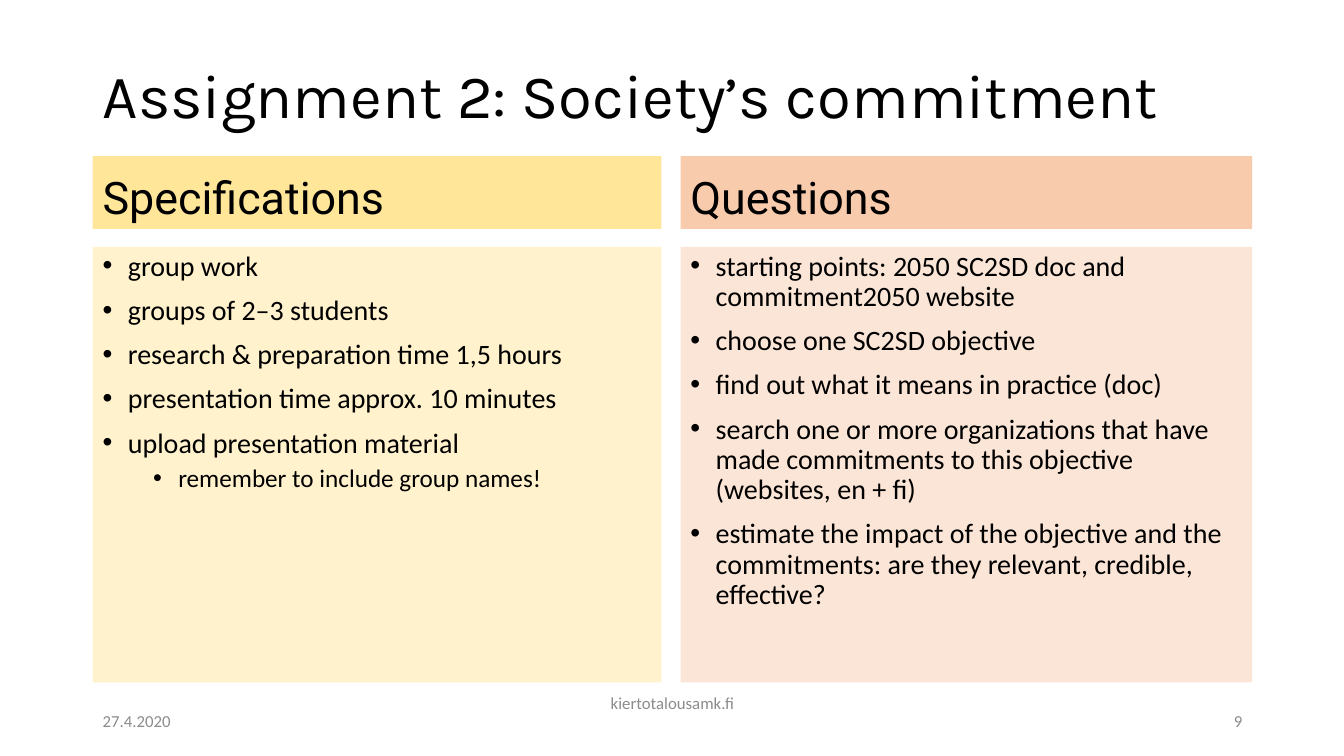
import pptx
import pptx.dml.color
import pptx.enum.text
import pptx.oxml.ns
import pptx.util
from lxml import etree

Inches, Pt = pptx.util.Inches, pptx.util.Pt
ALIGN = pptx.enum.text.PP_ALIGN
ANCHOR = pptx.enum.text.MSO_ANCHOR

COLORS = {
    "text": "000000", "muted": "8C8C8C",
    "gold": "FFE699", "cream": "FFF2CC",
    "peach": "F8CBAD", "blush": "FBE5D6",
}
TITLE = "Assignment 2: Society’s commitment"
# Each point is (level, text).
PANELS = [
    {"head": "Specifications", "left": 0.92, "width": 5.64,
     "dark": "gold", "light": "cream",
     "points": [
         (0, "group work"),
         (0, "groups of 2–3 students"),
         (0, "research & preparation time 1,5 hours"),
         (0, "presentation time approx. 10 minutes"),
         (0, "upload presentation material"),
         (1, "remember to include group names!"),
     ]},
    {"head": "Questions", "left": 6.75, "width": 5.67,
     "dark": "peach", "light": "blush",
     "points": [
         (0, "starting points: 2050 SC2SD doc and commitment2050 website"),
         (0, "choose one SC2SD objective"),
         (0, "find out what it means in practice (doc)"),
         (0, "search one or more organizations that have made commitments "
             "to this objective (websites, en + fi)"),
         (0, "estimate the impact of the objective and the commitments: "
             "are they relevant, credible, effective?"),
     ]},
]
# Text, left, top, width, alignment.
FOOTER = [
    ("27.4.2020", 0.92, 6.95, 3, ALIGN.LEFT),
    ("kiertotalousamk.fi", 4.42, 6.77, 4.5, ALIGN.CENTER),
    ("9", 9.42, 6.95, 3, ALIGN.RIGHT),
]
# Point size and space before, by level.
LEVELS = [(20, 10), (18, 5)]


def color(name):
    return pptx.dml.color.RGBColor.from_string(COLORS[name])


def add_box(slide, left, top, width, height, anchor, fill=None):
    box = slide.shapes.add_textbox(
        Inches(left), Inches(top), Inches(width), Inches(height))
    if fill:
        box.fill.solid()
        box.fill.fore_color.rgb = color(fill)
    frame = box.text_frame
    frame.word_wrap = True
    frame.vertical_anchor = anchor
    return frame


def add_run(para, text, size, font, ink="text"):
    run = para.add_run()
    run.text = text
    run.font.size = Pt(size)
    run.font.name = font
    run.font.color.rgb = color(ink)


def add_bullet(para, level):
    props = para._p.get_or_add_pPr()
    props.set("marL", str(Inches(0.25 + 0.5 * level)))
    props.set("indent", str(Inches(-0.25)))
    qn = pptx.oxml.ns.qn
    etree.SubElement(props, qn("a:buFont")).set("typeface", "Arial")
    etree.SubElement(props, qn("a:buChar")).set("char", "•")


def add_panel(slide, panel):
    left, width = panel["left"], panel["width"]
    head = add_box(slide, left, 1.55, width, 0.72,
                   ANCHOR.BOTTOM, panel["dark"]).paragraphs[0]
    head.line_spacing = 0.9
    add_run(head, panel["head"], 32, "Roboto")

    body = add_box(slide, left, 2.45, width, 4.32,
                   ANCHOR.TOP, panel["light"])
    for i, (level, text) in enumerate(panel["points"]):
        para = body.add_paragraph() if i else body.paragraphs[0]
        size, gap = LEVELS[level]
        para.level = level
        para.line_spacing = 0.9
        if i:
            para.space_before = Pt(gap)
        add_bullet(para, level)
        add_run(para, text, size, "Calibri")


def main():
    deck = pptx.Presentation()
    deck.slide_width, deck.slide_height = Inches(13.33), Inches(7.5)
    slide = deck.slides.add_slide(deck.slide_layouts[6])

    title = add_box(slide, 0.92, 0.4, 11.5, 1.15,
                    ANCHOR.MIDDLE).paragraphs[0]
    title.line_spacing = 0.9
    add_run(title, TITLE, 44, "Karla")

    for panel in PANELS:
        add_panel(slide, panel)

    for text, left, top, width, align in FOOTER:
        para = add_box(slide, left, top, width, 0.4,
                       ANCHOR.MIDDLE).paragraphs[0]
        para.alignment = align
        add_run(para, text, 12, "Calibri", "muted")

    deck.save("out.pptx")


if __name__ == "__main__":
    main()
